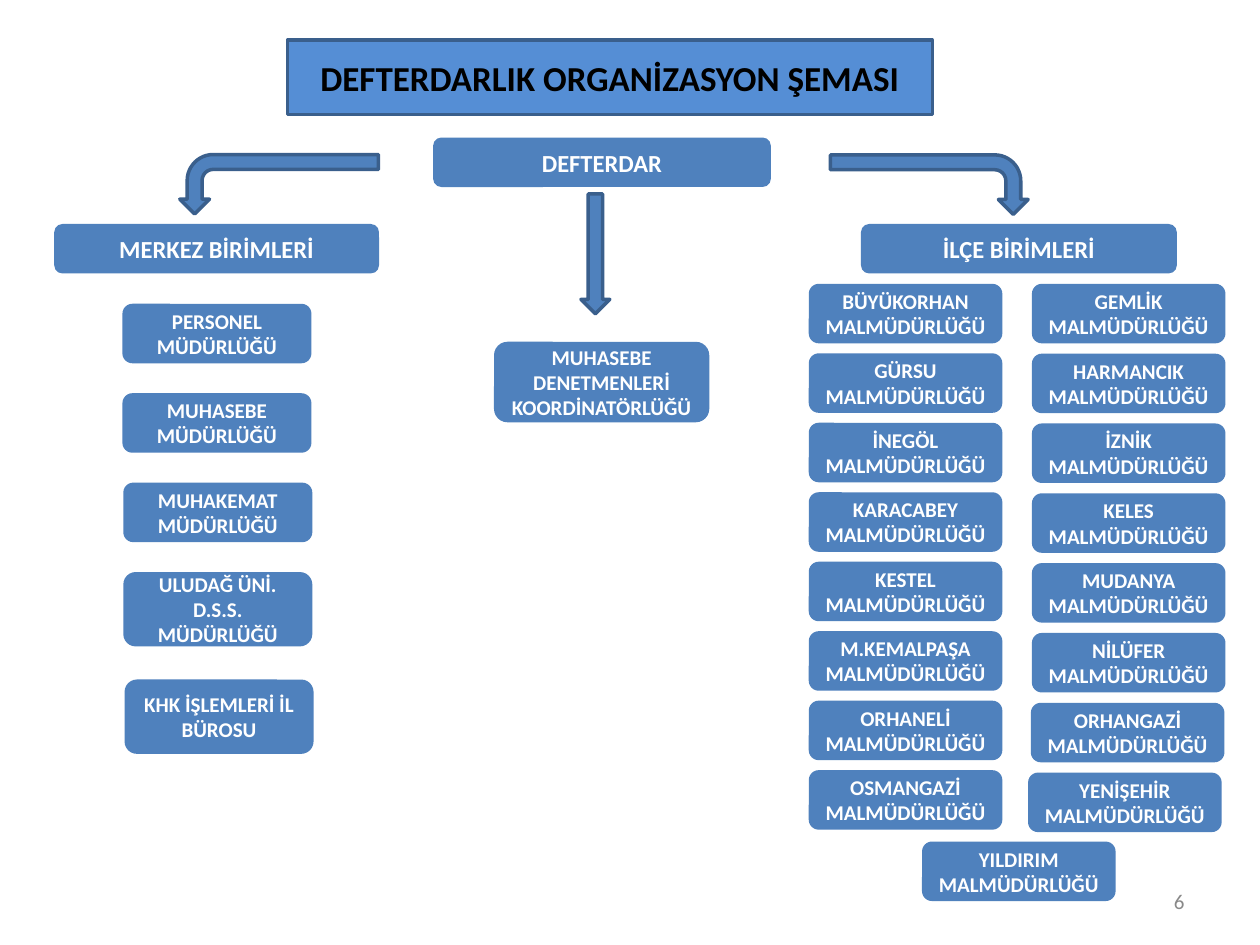
from copy import deepcopy
from dataclasses import dataclass

from lxml import etree
from pptx import Presentation
from pptx.dml.color import RGBColor
from pptx.enum.shapes import MSO_SHAPE
from pptx.enum.text import MSO_ANCHOR, PP_ALIGN
from pptx.oxml.ns import qn
from pptx.util import Pt

ROUND, BENT, DOWN = MSO_SHAPE.ROUNDED_RECTANGLE, MSO_SHAPE.BENT_ARROW, MSO_SHAPE.DOWN_ARROW
CENTER, RIGHT, MIDDLE = PP_ALIGN.CENTER, PP_ALIGN.RIGHT, MSO_ANCHOR.MIDDLE
BLUE = RGBColor(0x4F, 0x81, 0xBD)
SKY = RGBColor(0x55, 0x8E, 0xD5)
NAVY = RGBColor(0x3A, 0x5F, 0x8C)
WHITE = RGBColor(0xFF, 0xFF, 0xFF)
BLACK = RGBColor(0, 0, 0)
GRAY = RGBColor(0x89, 0x89, 0x89)


@dataclass
class Box:
    text: str
    left: float
    top: float
    width: float
    height: float
    size: float = 12


@dataclass
class Arrow:
    kind: MSO_SHAPE
    left: float
    top: float
    width: float
    height: float
    turn: float = 0
    flip: bool = False


def write(shape, text: str, size: float, color: RGBColor,
          bold: bool = True, align: PP_ALIGN = CENTER) -> None:
    frame = shape.text_frame
    frame.word_wrap = True
    frame.vertical_anchor = MIDDLE
    para = frame.paragraphs[0]
    para.text = text
    para.alignment = align
    for run in para.runs:
        font = run.font
        font.name, font.size, font.bold = "Calibri", Pt(size), bold
        font.color.rgb = color
    # Line breaks take the size of the runs
    for brk in para._p.findall(qn("a:br")):
        brk.append(deepcopy(para.runs[0]._r.rPr))


def outline(shape) -> None:
    shape.line.color.rgb = NAVY
    shape.line.width = Pt(2)


def draw_box(slide, box: Box) -> None:
    shape = slide.shapes.add_shape(
        ROUND, Pt(box.left), Pt(box.top), Pt(box.width), Pt(box.height))
    shape.shadow.inherit = False
    shape.fill.solid()
    shape.fill.fore_color.rgb = BLUE
    shape.line.fill.background()
    write(shape, box.text, box.size, WHITE)


def draw_arrow(slide, item: Arrow) -> None:
    shape = slide.shapes.add_shape(
        item.kind, Pt(item.left), Pt(item.top), Pt(item.width), Pt(item.height))
    shape.shadow.inherit = False
    shape.rotation = item.turn
    shape.fill.solid()
    shape.fill.fore_color.rgb = BLUE
    outline(shape)
    if item.flip:
        shape._element.spPr.find(qn("a:xfrm")).set("flipV", "1")


def draw_title(slide, text: str) -> None:
    title = slide.shapes.title
    title.left, title.top = Pt(164.2), Pt(23)
    title.width, title.height = Pt(368.6), Pt(42.5)
    geom = etree.SubElement(title._element.spPr, qn("a:prstGeom"), prst="roundRect")
    etree.SubElement(geom, qn("a:avLst"))
    title.fill.solid()
    title.fill.fore_color.rgb = SKY
    outline(title)
    write(title, text, 20, BLACK)


ARROWS = [
    Arrow(BENT, 514, 49, 34, 113, 90),
    Arrow(BENT, 142.5, 48.5, 34, 113.5, 90, True),
    Arrow(DOWN, 332, 110.8, 16.5, 68.5),
]

HEADS = [
    Box("DEFTERDAR", 247.5, 78.6, 193, 28.3, 14),
    Box("MERKEZ BİRİMLERİ", 31, 128, 185.6, 28.3, 14),
    Box("İLÇE BİRİMLERİ", 492, 128, 180.5, 28.3, 14),
    Box("MUHASEBE DENETMENLERİ KOORDİNATÖRLÜĞÜ", 282.3, 195.3, 123, 46),
]

# Central units
OFFICES = [
    Box("PERSONEL MÜDÜRLÜĞÜ", 70, 173.6, 108, 34),
    Box("MUHASEBE MÜDÜRLÜĞÜ", 70, 224.7, 108, 34),
    Box("MUHAKEMAT MÜDÜRLÜĞÜ", 70.5, 275.8, 108, 34),
    Box("ULUDAĞ ÜNİ. D.S.S.\nMÜDÜRLÜĞÜ", 70.5, 326.9, 108, 42.5),
    Box("KHK İŞLEMLERİ İL BÜROSU", 71.2, 388.3, 108, 42.5),
]

# District units: left edge, row pitch, names
COLUMNS = [
    (462.2, 39.7, ["BÜYÜKORHAN", "GÜRSU", "İNEGÖL", "KARACABEY",
                   "KESTEL", "M.KEMALPAŞA", "ORHANELİ", "OSMANGAZİ"]),
    (589.7, 39.9, ["GEMLİK", "HARMANCIK", "İZNİK", "KELES",
                   "MUDANYA", "NİLÜFER", "ORHANGAZİ", "YENİŞEHİR"]),
]
SPLIT = {"KARACABEY", "OSMANGAZİ", "GEMLİK", "İZNİK", "NİLÜFER"}
SHIFT = {"ORHANGAZİ": -0.6, "YENİŞEHİR": -2.2}


def district(name: str, left: float, top: float) -> Box:
    gap = "\n" if name in SPLIT else " "
    return Box(f"{name}{gap}MALMÜDÜRLÜĞÜ", left + SHIFT.get(name, 0), top, 110.6, 34)


def main() -> None:
    deck = Presentation()
    deck.slide_width, deck.slide_height = Pt(720), Pt(540)
    slide = deck.slides.add_slide(deck.slide_layouts[5])

    draw_title(slide, "DEFTERDARLIK ORGANİZASYON ŞEMASI")
    for item in ARROWS:
        draw_arrow(slide, item)

    towns = [district(name, left, 162.2 + row * pitch)
             for left, pitch, names in COLUMNS
             for row, name in enumerate(names)]
    towns.append(district("YILDIRIM", 526.9, 480.9))
    for box in HEADS + OFFICES + towns:
        draw_box(slide, box)

    # Page number
    page = slide.shapes.add_textbox(Pt(516), Pt(500.5), Pt(168), Pt(28.8))
    write(page, "6", 12, GRAY, False, RIGHT)

    deck.save("out.pptx")


if __name__ == "__main__":
    main()
